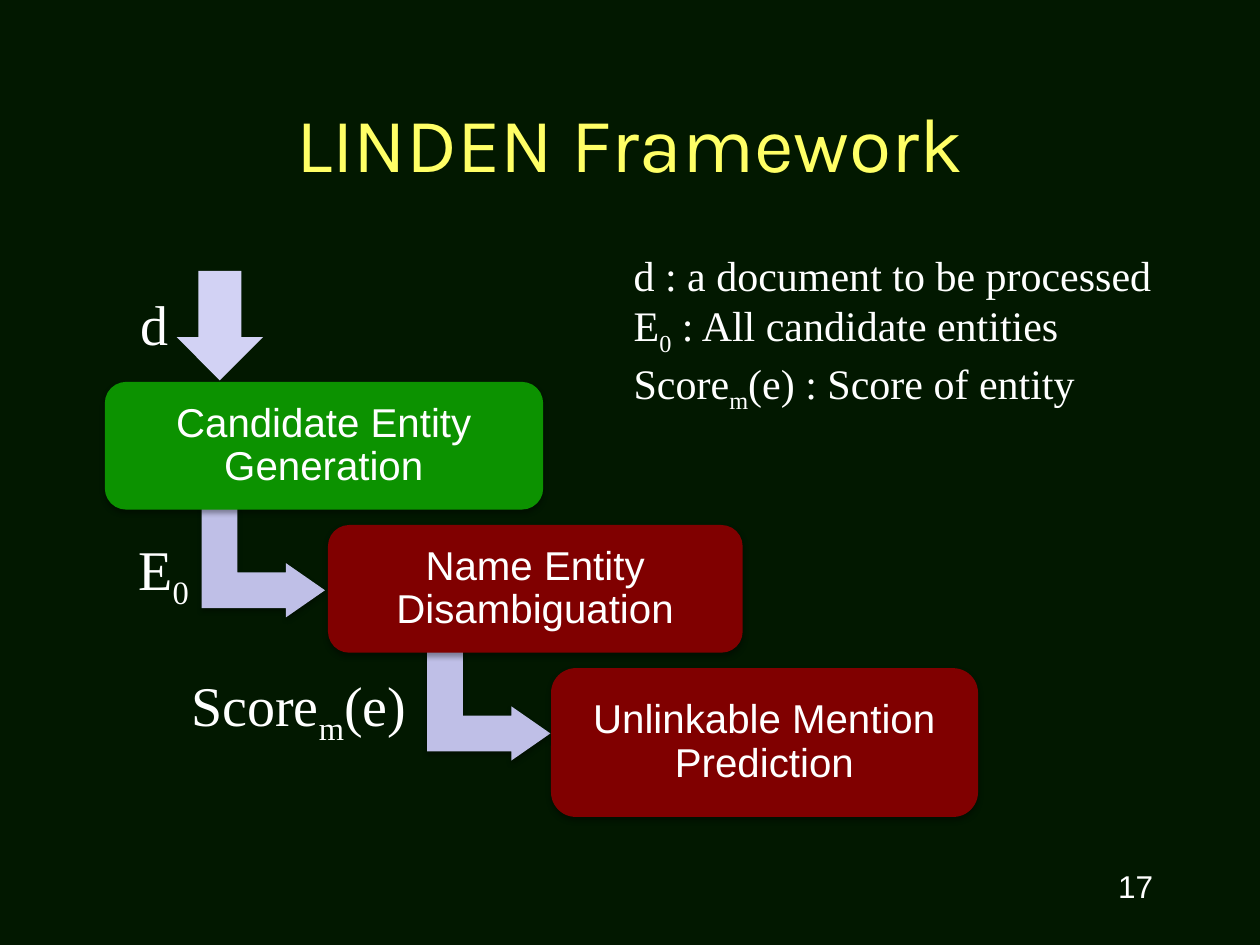
from dataclasses import dataclass

from lxml.etree import SubElement
from pptx import Presentation
from pptx.dml.color import RGBColor
from pptx.enum.shapes import MSO_SHAPE
from pptx.enum.text import MSO_ANCHOR, PP_ALIGN
from pptx.oxml.ns import qn
from pptx.util import Pt


@dataclass(frozen=True)
class Theme:
    background: str = "021800"
    title: str = "FFFF66"
    text: str = "FFFFFF"
    active: str = "0C9200"
    step: str = "800000"
    bent_arrow: str = "BFBFE7"
    input_arrow: str = "D2D2F4"
    title_font: str = "Karla"
    step_font: str = "Arial"
    label_font: str = "Times New Roman"
    title_size: float = 44
    label_size: float = 32
    legend_size: float = 24
    step_size: float = 23
    number_size: float = 18


THEME = Theme()

# Spans are (text, is subscript)
CANDIDATES = [("E", False), ("0", True)]
SCORE = [("Score", False), ("m", True), ("(e)", False)]

# Steps of the cascade: text, width, height, fill
STEPS = [
    ("Candidate Entity Generation", 250.5, 73, THEME.active),
    ("Name Entity Disambiguation", 237, 73, THEME.step),
    ("Unlinkable Mention Prediction", 244, 85, THEME.step),
]
FIRST_LEFT, FIRST_TOP = 59.9, 218.2
STEP_RIGHT, STEP_DOWN = 127.5, 81.8

# Labels: spans, position and size, wrap
LABELS = [
    ([("d", False)], (73.4, 162, 35.3, 46), True),
    (CANDIDATES, (72, 301.7, 45.4, 46), False),
    (SCORE, (102.2, 379.4, 140.4, 46), False),
]
LEGEND = [
    [("d : a document to be processed", False)],
    CANDIDATES + [(" : All candidate entities", False)],
    SCORE + [(" : Score of entity", False)],
]


def set_values(target, values):
    for name, value in values.items():
        setattr(target, name, value)


def write_text(frame, lines, font, size, color=THEME.text, frame_format=None, **para_format):
    set_values(frame, {"word_wrap": True, **(frame_format or {})})
    for index, spans in enumerate(lines):
        para = frame.paragraphs[0] if index == 0 else frame.add_paragraph()
        set_values(para, para_format)
        for text, is_subscript in spans:
            span = para.add_run()
            span.text = text
            set_values(span.font, {"name": font, "size": Pt(size)})
            span.font.color.rgb = RGBColor.from_string(color)
            if is_subscript:
                span._r.get_or_add_rPr().set("baseline", "-25000")


def add_text(page, lines, place, font, size, **formats):
    box = page.shapes.add_textbox(*map(Pt, place))
    write_text(box.text_frame, lines, font, size, **formats)


def add_soft_shadow(shape):
    effects = shape._element.spPr.find(qn("a:effectLst"))
    shadow = SubElement(effects, qn("a:outerShdw"), blurRad=str(Pt(3.1)),
                        dist=str(Pt(1.8)), dir="5400000", rotWithShape="0")
    color = SubElement(shadow, qn("a:srgbClr"), val="000000")
    SubElement(color, qn("a:alpha"), val="35000")


def add_filled_shape(page, kind, place, fill, shadowed=True):
    shape = page.shapes.add_shape(kind, *map(Pt, place))
    shape.shadow.inherit = False
    shape.fill.solid()
    shape.fill.fore_color.rgb = RGBColor.from_string(fill)
    shape.line.fill.background()
    if shadowed:
        add_soft_shadow(shape)
    return shape


def add_bent_arrow(page, left, top):
    arrow = add_filled_shape(page, MSO_SHAPE.BENT_UP_ARROW, (left, top, 61.9, 70.5), THEME.bent_arrow)
    arrow.rotation = 90
    for index, value in enumerate((0.33, 0.25, 0.36)):
        arrow.adjustments[index] = value


def add_step(page, text, place, fill):
    box = add_filled_shape(page, MSO_SHAPE.ROUNDED_RECTANGLE, place, fill)
    margins = {f"margin_{side}": Pt(10.8) for side in ("left", "top", "right", "bottom")}
    write_text(box.text_frame, [[(text, False)]], THEME.step_font, THEME.step_size,
               frame_format={**margins, "vertical_anchor": MSO_ANCHOR.MIDDLE},
               alignment=PP_ALIGN.CENTER, line_spacing=0.9)


def add_title(page, text):
    title = page.shapes.title
    set_values(title, {"left": Pt(54), "top": Pt(48), "width": Pt(612), "height": Pt(66)})
    write_text(title.text_frame, [[(text, False)]], THEME.title_font, THEME.title_size, THEME.title,
               frame_format={"vertical_anchor": MSO_ANCHOR.MIDDLE}, alignment=PP_ALIGN.CENTER)


def main():
    deck = Presentation()
    set_values(deck, {"slide_width": Pt(720), "slide_height": Pt(540)})
    page = deck.slides.add_slide(deck.slide_layouts[5])
    page.background.fill.solid()
    page.background.fill.fore_color.rgb = RGBColor.from_string(THEME.background)
    add_title(page, "LINDEN Framework")

    # Cascade: each step but the last leads to the next one
    for index, (text, width, height, fill) in enumerate(STEPS):
        left = FIRST_LEFT + index * STEP_RIGHT
        top = FIRST_TOP + index * STEP_DOWN
        if index < len(STEPS) - 1:
            add_bent_arrow(page, left + 59.6 + index * 1.3, top + 68.4)
        add_step(page, text, (left, top, width, height), fill)

    # Input arrow and the labels of what flows between steps
    add_filled_shape(page, MSO_SHAPE.DOWN_ARROW, (101, 154.8, 49.3, 62.6), THEME.input_arrow, shadowed=False)
    for spans, place, wrap in LABELS:
        add_text(page, [spans], place, THEME.label_font, THEME.label_size, frame_format={"word_wrap": wrap})

    # Legend and page number
    add_text(page, LEGEND, (355, 139, 365, 124), THEME.label_font, THEME.legend_size)
    add_text(page, [[("17", False)]], (516, 492, 150, 36), THEME.step_font, THEME.number_size,
             alignment=PP_ALIGN.RIGHT)

    deck.save("out.pptx")


if __name__ == "__main__":
    main()
